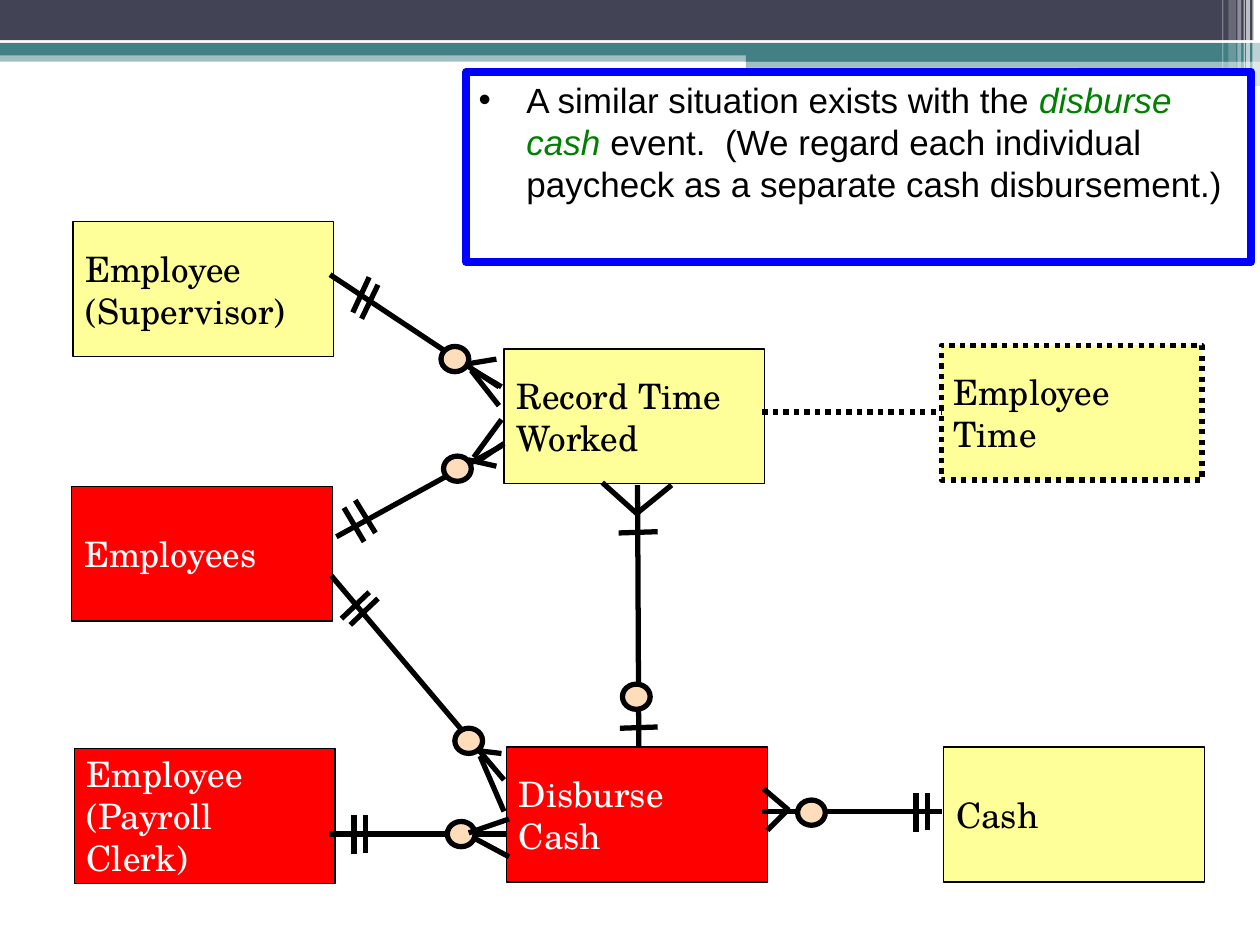
"""Build an entity diagram slide of payroll events and cash."""
from lxml import etree
from pptx import Presentation
from pptx import util as u
from pptx.dml.color import RGBColor
from pptx.enum import dml, shapes, text
from pptx.oxml.ns import qn

HUES = {"ink": "000000", "white": "FFFFFF", "red": "FF0000", "cream": "FFFF99",
        "peach": "FFDDBB", "blue": "0000FF", "green": "008000",
        "slate": "424456", "teal": "438086"}
SERIF, SANS = "TeX Gyre Schola", "Arial"
KINDS = shapes.MSO_SHAPE

BANDS = [(0, 0.4, 10, 0.09, "teal", 50), (-0.05, -0.02, 10, 0.34, "slate", 100),
         (0, 0.34, 10, 0.1, "teal", 100), (5.92, 0.39, 4.08, 0.1, "teal", 100),
         (5.92, 0.48, 4.08, 0.2, "teal", 50)]
STRIPES = [(9.94, 0.06, 0.68, 65), (9.89, 0.03, 0.68, 65), (9.87, 0.01, 0.68, 60),
           (9.82, 0.03, 0.68, 40), (9.75, 0.06, 0.64, 20), (9.7, 0.01, 0.64, 30)]
BOXES = [(0.57, 3.86, "red", ["Employees"]),
         (0.59, 5.94, "red", ["Employee (Payroll Clerk)"]),
         (0.58, 1.76, "cream", ["Employee", "(Supervisor)"]),
         (4, 2.77, "cream", ["Record Time Worked"]),
         (4.02, 5.93, "red", ["Disburse Cash"]),
         (7.49, 5.93, "cream", ["Cash"])]
LINKS = [(2.62, 2.18, 3.96, 3.07), (2.61, 6.62, 4.02, 6.62), (2.67, 4.26, 3.98, 3.54),
         (6.05, 6.44, 7.48, 6.44), (4, 6.19, 2.63, 4.57), (5.07, 5.93, 5.06, 3.85)]
BARS = [(2.8, 2.48, 2.93, 2.2), (2.87, 2.53, 3, 2.26),
        (2.89, 4.3, 2.73, 4.03), (2.98, 4.23, 2.82, 3.97),
        (2.71, 4.91, 2.93, 4.7), (2.78, 4.96, 3, 4.75),
        (2.81, 6.78, 2.81, 6.47), (2.9, 6.77, 2.9, 6.47),
        (7.27, 6.6, 7.27, 6.29), (7.36, 6.59, 7.36, 6.29),
        (5.22, 5.77, 4.92, 5.78), (5.22, 4.22, 4.91, 4.23)]
RINGS = [(3.5, 2.75), (3.52, 3.62), (3.61, 5.78), (3.55, 6.52), (4.94, 5.43), (6.33, 6.35)]
PRONGS = [(3.94, 2.85, 3.7, 2.89), (3.74, 2.94, 3.96, 3.22), (3.98, 3.07, 3.76, 2.94),
          (3.72, 3.65, 3.94, 3.7), (3.76, 3.63, 3.98, 3.33), (3.78, 3.67, 4, 3.52),
          (3.98, 5.98, 3.81, 5.96), (3.81, 6, 4, 6.44),
          (3.72, 6.61, 4.04, 6.5), (3.76, 6.65, 4.04, 6.8),
          (5.06, 4.07, 5.33, 3.85), (5.07, 4.09, 4.78, 3.83),
          (6.26, 6.43, 6.06, 6.26), (6.24, 6.44, 6.09, 6.59)]


def tint(name):
    return RGBColor.from_string(HUES[name])


def stroke(line, hue, width, dots=False):
    line.color.rgb = tint(hue)
    line.width = u.Pt(width)
    if dots:
        line.dash_style = dml.MSO_LINE.ROUND_DOT


def add_form(slide, place, fill, kind=KINDS.RECTANGLE, alpha=100, edge=None):
    form = slide.shapes.add_shape(kind, *map(u.Inches, place))
    form.shadow.inherit = False
    form.fill.solid()
    form.fill.fore_color.rgb = tint(fill)
    if alpha < 100:
        hue = form.fill._xPr.find(".//" + qn("a:srgbClr"))
        etree.SubElement(hue, qn("a:alpha"), val=str(alpha * 1000))
    if edge:
        stroke(form.line, *edge)
    else:
        form.line.fill.background()
    return form


def add_line(slide, ends, dots=False):
    line = slide.shapes.add_connector(shapes.MSO_CONNECTOR.STRAIGHT, *map(u.Inches, ends))
    stroke(line.line, "ink", 3, dots)
    etree.SubElement(line._element.spPr, qn("a:effectLst"))


def add_run(para, words, hue, face, slant=False):
    run = para.add_run()
    run.text = words
    font = run.font
    font.name, font.size, font.italic = face, u.Pt(20), slant
    font.color.rgb = tint(hue)


def add_box(slide, left, top, fill, rows, width=0.75, dots=False):
    box = add_form(slide, (left, top, 2.07, 1.07), fill, edge=("ink", width, dots))
    frame = box.text_frame
    frame.word_wrap = True
    frame.vertical_anchor = text.MSO_ANCHOR.MIDDLE
    for i, row in enumerate(rows):
        para = frame.add_paragraph() if i else frame.paragraphs[0]
        para.alignment = text.PP_ALIGN.LEFT
        add_run(para, row, "white" if fill == "red" else "ink", SERIF)


def add_note(slide):
    note = add_form(slide, (3.7, 0.57, 6.23, 1.51), "white", edge=("blue", 4.5))
    frame = note.text_frame
    frame.word_wrap = True
    frame.vertical_anchor = text.MSO_ANCHOR.TOP
    para = frame.paragraphs[0]
    para.alignment = text.PP_ALIGN.LEFT
    para.space_before = u.Pt(4)
    props = para._p.get_or_add_pPr()
    props.set("marL", str(u.Inches(0.38)))
    props.set("indent", str(u.Inches(-0.38)))
    etree.SubElement(props, qn("a:buFont"), typeface=SANS)
    etree.SubElement(props, qn("a:buChar"), char="•")
    add_run(para, "A similar situation exists with the ", "ink", SANS)
    add_run(para, "disburse cash ", "green", SANS, True)
    add_run(para, "event.  (We regard each individual paycheck "
            "as a separate cash disbursement.)", "ink", SANS)


def add_trim(slide):
    for *place, hue, alpha in BANDS:
        add_form(slide, place, hue, alpha=alpha)
    pill = add_form(slide, (5.91, 0.54, 3.35, 0.03), "white", KINDS.ROUNDED_RECTANGLE)
    pill.adjustments[0] = 0.17
    for left, width, height, alpha in STRIPES:
        add_form(slide, (left, 0, width, height), "white", alpha=alpha)


def main():
    deck = Presentation()
    deck.slide_width, deck.slide_height = u.Inches(10), u.Inches(7.5)
    slide = deck.slides.add_slide(deck.slide_layouts[6])
    add_trim(slide)
    for box in BOXES:
        add_box(slide, *box)
    add_box(slide, 7.47, 2.74, "cream", ["Employee Time"], 3, True)
    add_line(slide, (6.05, 3.27, 7.47, 3.27), True)
    for ends in LINKS + BARS:
        add_line(slide, ends)
    for left, top in RINGS:
        add_form(slide, (left, top, 0.22, 0.2), "peach", KINDS.OVAL, edge=("ink", 3))
    for ends in PRONGS:
        add_line(slide, ends)
    add_note(slide)
    deck.save("out.pptx")


if __name__ == "__main__":
    main()
